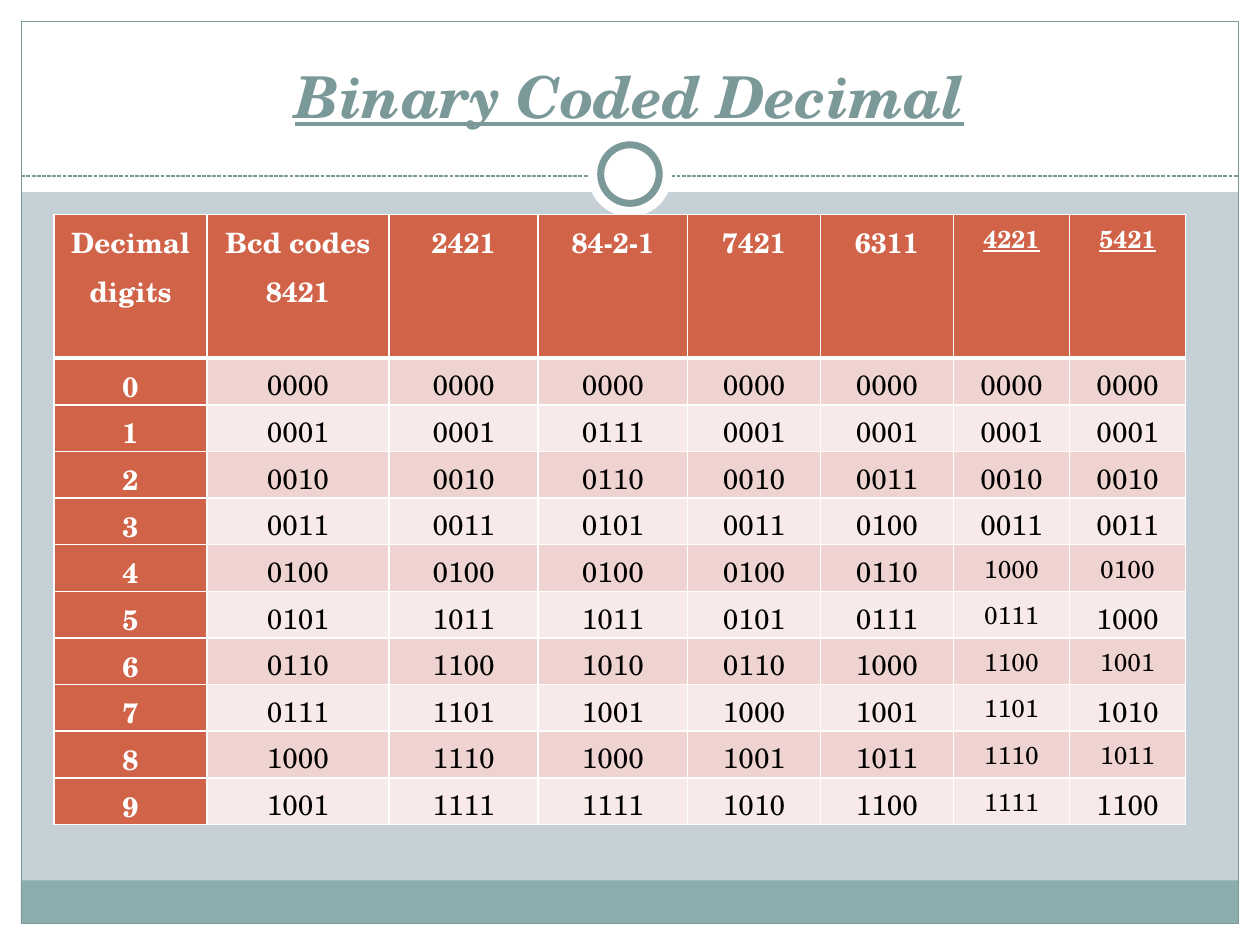
from dataclasses import dataclass

from lxml import etree
from pptx import Presentation
from pptx.dml.color import RGBColor
from pptx.enum.dml import MSO_LINE
from pptx.enum.shapes import MSO_CONNECTOR, MSO_SHAPE
from pptx.enum.text import MSO_ANCHOR, PP_ALIGN
from pptx.oxml.ns import qn
from pptx.util import Cm, Pt

RECTANGLE = MSO_SHAPE.RECTANGLE
OVAL = MSO_SHAPE.OVAL
STRAIGHT = MSO_CONNECTOR.STRAIGHT
DASHED = MSO_LINE.SQUARE_DOT
CENTER = PP_ALIGN.CENTER
BOTTOM = MSO_ANCHOR.BOTTOM

FONT = "TeX Gyre Schola"
COLORS = {
    "white": "FFFFFF",
    "black": "000000",
    "backdrop": "C5D1D7",
    "footer": "8CADAE",
    "accent": "7C999A",
    "header": "D16349",
    "odd": "EED3D0",
    "even": "F7EAE9",
}

COLUMN_WIDTHS = [3.08, 3.67, 3.01, 3.01, 2.68, 2.68, 2.34, 2.34]
HEADER_HEIGHT = 2.9
DIGIT_HEIGHT = 0.94
HEADINGS = ["Decimal digits", "Bcd codes\n8421", "2421", "84-2-1", "7421", "6311", "4221", "5421"]
CODES = [
    "0000 0000 0000 0000 0000 0000 0000",
    "0001 0001 0111 0001 0001 0001 0001",
    "0010 0010 0110 0010 0011 0010 0010",
    "0011 0011 0101 0011 0100 0011 0011",
    "0100 0100 0100 0100 0110 1000 0100",
    "0101 1011 1011 0101 0111 0111 1000",
    "0110 1100 1010 0110 1000 1100 1001",
    "0111 1101 1001 1000 1001 1101 1010",
    "1000 1110 1000 1001 1011 1110 1011",
    "1001 1111 1111 1010 1100 1111 1100",
]
SMALL_CELLS = {(0, 6), (0, 7)} | {(row, 6) for row in range(5, 11)} | {(row, 7) for row in (5, 7, 9)}


@dataclass
class Panel:
    left: float
    top: float
    width: float
    height: float
    fill: str | None = "white"
    line: str | None = None
    weight: float = 0.75
    kind: MSO_SHAPE = RECTANGLE


@dataclass
class TextStyle:
    size: float
    color: str
    bold: bool = False
    italic: bool = False
    underline: bool = False


FRAME_PANELS = [
    Panel(0, 18.62, 25.4, 0.43),
    Panel(0, 0, 25.4, 3.87),
    Panel(0, 0, 0.43, 19.05),
    Panel(24.97, 0, 0.43, 19.05),
    Panel(0.42, 17.75, 24.54, 0.87, fill="footer"),
    Panel(0.43, 0.43, 24.54, 18.19, fill=None, line="accent"),
]
RING_PANELS = [
    Panel(11.85, 2.67, 1.7, 1.7, kind=OVAL),
    Panel(12.11, 2.92, 1.18, 1.18, line="accent", weight=4, kind=OVAL),
]


def rgb(name: str) -> RGBColor:
    return RGBColor.from_string(COLORS[name])


def add_panel(page, panel: Panel) -> None:
    shape = page.shapes.add_shape(
        panel.kind, Cm(panel.left), Cm(panel.top), Cm(panel.width), Cm(panel.height)
    )
    shape.shadow.inherit = False
    if panel.fill:
        shape.fill.solid()
        shape.fill.fore_color.rgb = rgb(panel.fill)
    else:
        shape.fill.background()
    if panel.line:
        shape.line.color.rgb = rgb(panel.line)
        shape.line.width = Pt(panel.weight)
    else:
        shape.line.fill.background()


def add_divider(page) -> None:
    divider = page.shapes.add_connector(STRAIGHT, Cm(0.43), Cm(3.55), Cm(24.97), Cm(3.55))
    divider.line.color.rgb = rgb("accent")
    divider.line.width = Pt(0.75)
    divider.line.dash_style = DASHED
    etree.SubElement(divider._element.spPr, qn("a:effectLst"))


def write_text(frame, text: str, style: TextStyle, spacing: float = 1.0) -> None:
    for index, line in enumerate(text.split("\n")):
        para = frame.add_paragraph() if index else frame.paragraphs[0]
        para.alignment = CENTER
        para.line_spacing = spacing
        span = para.add_run()
        span.text = line
        span.font.name = FONT
        span.font.size = Pt(style.size)
        span.font.color.rgb = rgb(style.color)
        span.font.bold = style.bold
        span.font.italic = style.italic
        span.font.underline = style.underline


def add_title(page) -> None:
    box = page.shapes.add_textbox(Cm(0.85), Cm(0.64), Cm(23.7), Cm(2.1))
    box.text_frame.word_wrap = True
    box.text_frame.vertical_anchor = BOTTOM
    style = TextStyle(33, "accent", bold=True, italic=True, underline=True)
    write_text(box.text_frame, "Binary Coded Decimal", style)


def set_borders(cell, row: int) -> None:
    weights = {"L": 1, "R": 1, "T": 3 if row == 1 else 1, "B": 3 if row == 0 else 1}
    properties = cell._tc.get_or_add_tcPr()
    for side, weight in weights.items():
        border = etree.SubElement(properties, qn(f"a:ln{side}"), w=str(Pt(weight)))
        fill = etree.SubElement(border, qn("a:solidFill"))
        etree.SubElement(fill, qn("a:srgbClr"), val=COLORS["white"])


def fill_cell(cell, row: int, column: int, text: str) -> None:
    heading = row == 0 or column == 0
    small = (row, column) in SMALL_CELLS
    cell.margin_left = cell.margin_right = Cm(0.18)
    cell.margin_top = cell.margin_bottom = Cm(0)
    set_borders(cell, row)
    cell.fill.solid()
    cell.fill.fore_color.rgb = rgb("header" if heading else "odd" if row % 2 else "even")
    style = TextStyle(
        size=14 if small else 16,
        color="white" if heading else "black",
        bold=heading,
        underline=small and row == 0,
    )
    write_text(cell.text_frame, text, style, spacing=1.15)


def add_code_table(page) -> None:
    rows = [HEADINGS] + [[str(digit), *codes.split()] for digit, codes in enumerate(CODES)]
    heights = [HEADER_HEIGHT] + [DIGIT_HEIGHT] * len(CODES)
    table = page.shapes.add_table(
        len(rows), len(HEADINGS), Cm(1.09), Cm(4.32), Cm(sum(COLUMN_WIDTHS)), Cm(sum(heights))
    ).table
    table.first_col = True
    for column, width in zip(table.columns, COLUMN_WIDTHS):
        column.width = Cm(width)
    for row, height in zip(table.rows, heights):
        row.height = Cm(height)
    for row, texts in enumerate(rows):
        for column, text in enumerate(texts):
            fill_cell(table.cell(row, column), row, column, text)


def main() -> None:
    deck = Presentation()
    deck.slide_width = Cm(25.4)
    deck.slide_height = Cm(19.05)
    page = deck.slides.add_slide(deck.slide_layouts[6])
    page.background.fill.solid()
    page.background.fill.fore_color.rgb = rgb("backdrop")
    for panel in FRAME_PANELS:
        add_panel(page, panel)
    add_divider(page)
    for panel in RING_PANELS:
        add_panel(page, panel)
    add_title(page)
    add_code_table(page)
    deck.save("out.pptx")


if __name__ == "__main__":
    main()
